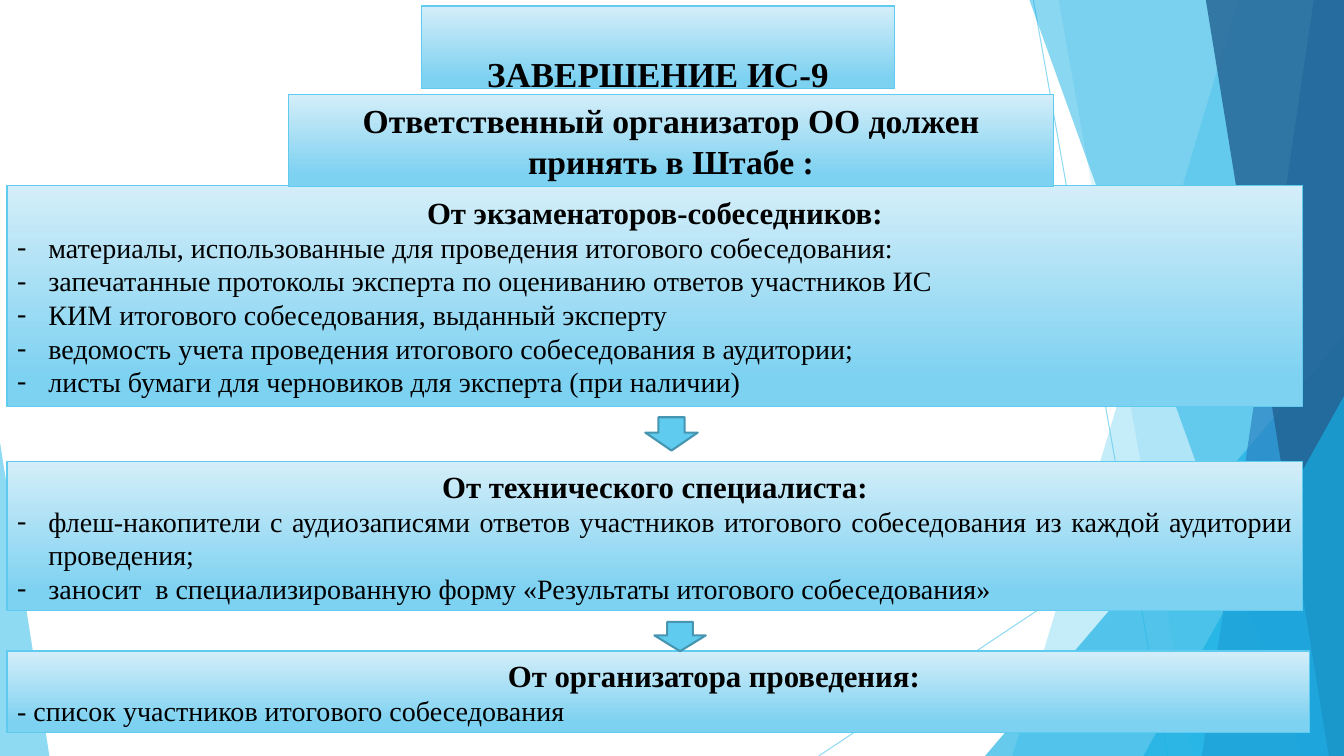
from lxml import etree
from pptx import Presentation
from pptx import util as u
from pptx.dml.color import RGBColor
from pptx.enum import shapes, text
from pptx.oxml import ns

W, H = 13.33, 7.5
FONT = "Times New Roman"
SKY, AZURE = RGBColor(0x5F, 0xCB, 0xEF), RGBColor(0x17, 0xB0, 0xE4)
BLUE, NAVY = RGBColor(0x2E, 0x83, 0xC3), RGBColor(0x22, 0x62, 0x92)
PALE, LIGHT = RGBColor(0xD4, 0xEE, 0xF9), RGBColor(0x7D, 0xD1, 0xF1)
TEAL, BLACK = RGBColor(0x46, 0x96, 0xB1), RGBColor(0, 0, 0)

CENTER, LEFT, JUSTIFY = (text.PP_ALIGN.CENTER, text.PP_ALIGN.LEFT,
                         text.PP_ALIGN.JUSTIFY)
INDENT = 0.31

# Facets: x at the top edge, x at the bottom edge, colour, opacity in %
BACK_FACETS = [(12.28, 10.04, SKY, 36), (10.5, 11.83, SKY, 20)]
FRONT_FACETS = [(10.21, 12.91, AZURE, 50), (13.03, 11.92, BLUE, 70),
                (11.96, 13.18, NAVY, 80)]
RAYS = [((10.25, 0), (11.58, H)), ((W, 4.03), (8.12, H))]

# Steps: box, heading, heading indent, list alignment, list mark, items
STEPS = [
    ((0.07, 1.84, 12.85, 2.19), "От экзаменаторов-собеседников:", 0, LEFT, "-",
     ["материалы, использованные для проведения итогового собеседования:",
      "запечатанные протоколы эксперта по оцениванию ответов участников ИС",
      "КИМ итогового собеседования, выданный эксперту",
      "ведомость учета проведения итогового собеседования в аудитории;",
      "листы бумаги для черновиков для эксперта (при наличии)"]),
    ((0.07, 4.58, 12.85, 1.48), "От технического специалиста:", 0, JUSTIFY, "-",
     ["флеш-накопители с аудиозаписями ответов участников итогового "
      "собеседования из каждой аудитории проведения;",
      "заносит  в специализированную форму «Результаты итогового собеседования»"]),
    ((0.07, 6.46, 12.92, 0.81), "От организатора проведения:", 1.1, JUSTIFY, None,
     ["- список участников итогового собеседования"]),
]
ARROWS = [(6.4, 4.14, 0.52, 0.33), (6.49, 6.17, 0.51, 0.29)]


def inches(values):
    return [u.Inches(v) for v in values]


def apply(target, **settings):
    for key, value in settings.items():
        setattr(target, key, value)


def set_alpha(color_format_parent, opacity):
    for color in color_format_parent.iter(ns.qn("a:srgbClr")):
        etree.SubElement(color, ns.qn("a:alpha"), val=str(opacity * 1000))


def paint(facet, color, opacity):
    facet.shadow.inherit = False
    facet.fill.solid()
    facet.fill.fore_color.rgb = color
    facet.line.fill.background()
    set_alpha(facet.element.spPr, opacity)


# Background decoration
def add_facets(slide, facets):
    for top, bottom, color, opacity in facets:
        outline = slide.shapes.build_freeform(u.Inches(top), 0, scale=1.0)
        corners = [(W, 0), (W, H), (bottom, H)]
        outline.add_line_segments([inches(c) for c in corners], close=True)
        paint(outline.convert_to_shape(), color, opacity)


def add_corner(slide, box, apex, color, opacity):
    corner = slide.shapes.add_shape(shapes.MSO_SHAPE.ISOSCELES_TRIANGLE,
                                    *inches(box))
    corner.adjustments[0] = apex
    paint(corner, color, opacity)


def add_backdrop(slide):
    for start, end in RAYS:
        ray = slide.shapes.add_connector(shapes.MSO_CONNECTOR.STRAIGHT,
                                         *inches(start + end))
        ray.line.color.rgb = SKY
        ray.line.width = u.Pt(0.75)
        set_alpha(ray.element.spPr, 70)
        etree.SubElement(ray.element.spPr, ns.qn("a:effectLst"))
    add_facets(slide, BACK_FACETS)
    add_corner(slide, (9.77, 3.33, W - 9.77, H - 3.33), 1, AZURE, 66)
    add_facets(slide, FRONT_FACETS)
    add_corner(slide, (11.34, 3.93, W - 11.34, H - 3.93), 1, AZURE, 66)
    add_corner(slide, (0, 4.39, 0.49, H - 4.39), 0, SKY, 70)


# Gradient panel holding the text of a placeholder
def format_panel(panel, box):
    apply(panel, **dict(zip(("left", "top", "width", "height"), inches(box))))
    panel.fill.gradient()
    panel.fill.gradient_angle = 270
    for stop, color, position in zip(panel.fill.gradient_stops,
                                     (PALE, LIGHT), (0, 0.88)):
        stop.color.rgb = color
        stop.position = position
    panel.line.color.rgb = SKY
    panel.line.width = u.Pt(1)
    apply(panel.text_frame, word_wrap=True, auto_size=text.MSO_AUTO_SIZE.NONE,
          vertical_anchor=text.MSO_ANCHOR.MIDDLE)
    panel.element.getparent().append(panel.element)


def write_line(line, words, size, bold, align, indent=0, mark=None):
    line.text = words
    apply(line, alignment=align, space_before=u.Pt(0), line_spacing=1.0)
    apply(line.runs[0].font, name=FONT, size=u.Pt(size), bold=bold)
    line.runs[0].font.color.rgb = BLACK
    props = line._p.get_or_add_pPr()
    props.set("marL", str(u.Inches(indent)))
    props.set("indent", str(u.Inches(-indent if mark else 0)))
    if mark:
        etree.SubElement(props, ns.qn("a:buFont"), typeface=FONT)
        etree.SubElement(props, ns.qn("a:buChar"), char=mark)
    else:
        etree.SubElement(props, ns.qn("a:buNone"))


def fill_heading(panel, box, words, size):
    format_panel(panel, box)
    write_line(panel.text_frame.paragraphs[0], words, size, True, CENTER)


def fill_step(panel, box, heading, shift, align, mark, items):
    format_panel(panel, box)
    frame = panel.text_frame
    write_line(frame.paragraphs[0], heading, 22, True, CENTER, shift)
    for item in items:
        write_line(frame.add_paragraph(), item, 20, False, align,
                   INDENT if mark else 0, mark)


def add_arrow(slide, box):
    arrow = slide.shapes.add_shape(shapes.MSO_SHAPE.DOWN_ARROW, *inches(box))
    arrow.shadow.inherit = False
    arrow.adjustments[1] = 0.54
    arrow.fill.solid()
    arrow.fill.fore_color.rgb = SKY
    arrow.line.color.rgb = TEAL
    arrow.line.width = u.Pt(1.5)


def main():
    deck = Presentation()
    apply(deck, slide_width=u.Inches(W), slide_height=u.Inches(H))
    slide = deck.slides.add_slide(deck.slide_layouts.get_by_name("Comparison"))
    title, subtitle, *panels = slide.placeholders
    add_backdrop(slide)

    fill_heading(title, (4.18, 0.06, 4.69, 0.82), "ЗАВЕРШЕНИЕ ИС-9", 25)
    apply(title.text_frame, vertical_anchor=text.MSO_ANCHOR.TOP,
          margin_top=u.Inches(0.46), margin_bottom=0)
    for panel, step in zip(panels, STEPS):
        fill_step(panel, *step)
    fill_heading(subtitle, (2.86, 0.94, 7.59, 0.91),
                 "Ответственный организатор ОО должен принять в Штабе :", 24)
    for box in ARROWS:
        add_arrow(slide, box)
    deck.save("out.pptx")


if __name__ == "__main__":
    main()
